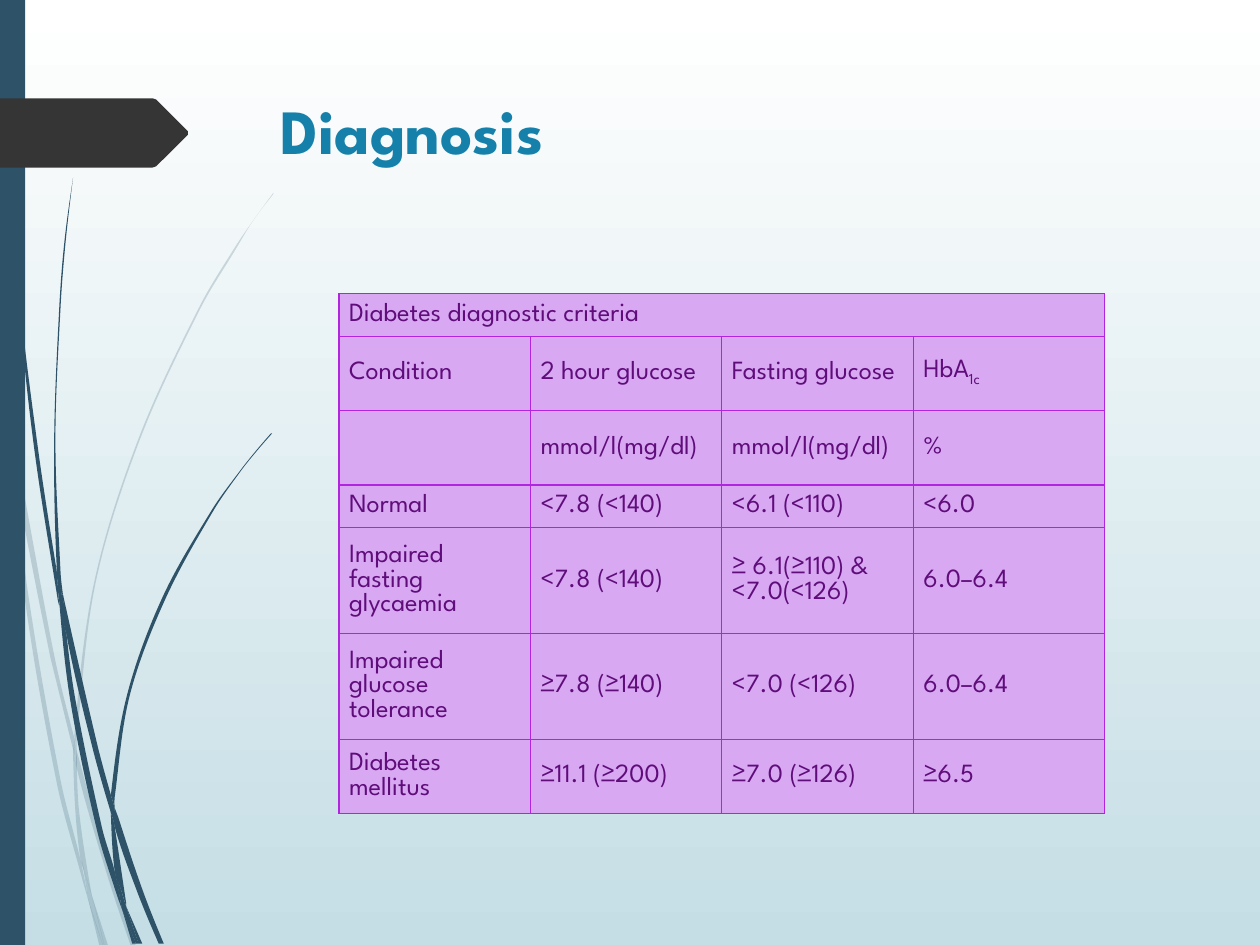
from math import dist
from lxml.etree import SubElement
from pptx import Presentation
from pptx.dml.color import RGBColor
from pptx.enum.shapes import MSO_SHAPE
from pptx.enum.text import MSO_ANCHOR
from pptx.oxml.ns import qn
from pptx.util import Inches, Pt

FONT = "League Spartan"
COLORS = {
    "sky_top": "FFFFFF", "sky_bottom": "C5DEE5", "grass": "2E5369", "arrow": "353535",
    "title": "1581AA", "cell": "D8A8F2", "border": "B125DF", "cell_text": "600D7B",
}

# Each blade piece is a pair of edges, walked one after the other around the piece.
PALE_BLADES = [
    ([(0.08, 3.5), (0.06, 3.22), (0, 2.82)], [(0, 2.99), (0.07, 3.44)]),
    ([(0.4, 5.22), (0.59, 5.99)],
     [(0.59, 5.86), (0.43, 5.2), (0.1, 3.45), (0.12, 3.76), (0.4, 5.22)]),
    ([(0.61, 5.96), (0.61, 6.1), (0.85, 6.94), (1.04, 7.51)],
     [(1.08, 7.51), (0.88, 6.92), (0.64, 6.07)]),
    ([(0.83, 7.51), (0.86, 7.51)], [(0.73, 7.11)]),
    ([(0.7, 7.14), (0.64, 6.83), (0.48, 6.19), (0.22, 4.69), (0.12, 3.76), (0.08, 3.5)],
     [(0.08, 3.5), (0.19, 4.7), (0.45, 6.21), (0.64, 6.93), (0.7, 7.14)]),
    ([(0.58, 5.99), (0.6, 6.46), (0.64, 6.83), (0.67, 6.92), (0.73, 7.11)],
     [(0.72, 7.06), (0.63, 6.46), (0.61, 6.1)]),
    ([(0.61, 5.96), (0.61, 5.84), (0.76, 4.62), (1.11, 3.49), (1.59, 2.45), (1.87, 1.98),
      (2.01, 1.75), (2.17, 1.54)],
     [(2.17, 1.53), (2.01, 1.75), (1.86, 1.97), (1.58, 2.44), (1.1, 3.48), (0.75, 4.61),
      (0.59, 5.84)]),
    ([(0.7, 7.14), (0.79, 7.51)], [(0.82, 7.51)]),
    ([(0.61, 6.1), (0.61, 5.96)], [(0.59, 5.86), (0.58, 5.99)]),
    ([(0.65, 6.83), (0.69, 7.07), (0.7, 7.14), (0.82, 7.51)],
     [(0.83, 7.51), (0.73, 7.11), (0.67, 6.92)]),
]
DARK_BLADES = [
    ([(0.02, 0), (0.03, 0.48), (0.05, 1.1), (0.14, 2.33), (0.27, 3.55), (0.46, 4.77),
      (0.47, 4.81)],
     [(0.45, 4.53), (0.3, 3.55), (0.15, 2.32), (0.06, 1.09), (0.04, 0.48), (0.03, 0)]),
    ([(0.5, 4.72), (0.53, 5.05), (0.73, 5.92), (0.88, 6.45)],
     [(0.88, 6.31), (0.77, 5.9), (0.5, 4.72)]),
    ([(0.91, 6.41), (0.91, 6.56), (1.09, 7.08), (1.26, 7.49)],
     [(1.3, 7.49), (1.13, 7.06), (0.94, 6.49)]),
    ([(0.47, 4.77), (0.56, 5.57), (0.77, 6.59), (0.92, 7.08), (0.97, 7.22)],
     [(0.96, 7.17), (0.91, 6.91), (0.81, 6.57), (0.6, 5.56), (0.53, 5.05)]),
    ([(0.5, 4.72), (0.48, 4.53), (0.44, 3.49), (0.48, 2.45), (0.52, 1.93), (0.58, 1.41)],
     [(0.58, 1.41), (0.51, 1.93), (0.47, 2.45), (0.43, 3.49), (0.45, 4.49), (0.49, 4.72)]),
    ([(1.1, 7.49), (1.13, 7.49)], [(1, 7.19)]),
    ([(0.45, 4.49), (0.47, 4.77), (0.53, 5.05)], [(0.5, 4.72), (0.49, 4.72)]),
    ([(0.91, 6.41), (0.91, 6.33), (1.03, 5.52), (1.31, 4.76), (1.69, 4.06), (1.91, 3.74),
      (2.03, 3.59), (2.16, 3.44)],
     [(2.15, 3.44), (2.03, 3.58), (1.91, 3.73), (1.68, 4.05), (1.29, 4.74), (1.01, 5.51),
      (0.88, 6.31)]),
    ([(0.97, 7.22), (1.05, 7.49)], [(1.08, 7.49)]),
    ([(0.88, 6.45), (0.91, 6.91), (0.96, 7.06), (1, 7.19)],
     [(1, 7.16), (0.91, 6.56), (0.9, 6.51)]),
    ([(0.88, 6.45), (0.9, 6.51), (0.91, 6.56)], [(0.91, 6.41), (0.88, 6.31)]),
    ([(0.91, 6.91), (0.96, 7.17), (0.97, 7.22), (1.08, 7.49)],
     [(1.1, 7.49), (1, 7.19), (0.96, 7.06)]),
]
ARROW = [(0, 0.78), (1.21, 0.78), (1.24, 0.79), (1.49, 1.04), (1.49, 1.07),
         (1.24, 1.32), (1.21, 1.33), (0, 1.33)]

COLUMN_WIDTH = 1.52
ROW_HEIGHTS = [0.34, 0.59, 0.59, 0.34, 0.84, 0.84, 0.59]
CRITERIA = [
    ["Diabetes diagnostic criteria", "", "", ""],
    ["Condition", "2 hour glucose", "Fasting glucose", "HbA"],
    ["", "mmol/l(mg/dl)", "mmol/l(mg/dl)", "%"],
    ["Normal", "<7.8 (<140)", "<6.1 (<110)", "<6.0"],
    ["Impaired fasting glycaemia", "<7.8 (<140)", "≥ 6.1(≥110) & <7.0(<126)", "6.0–6.4"],
    ["Impaired glucose tolerance", "≥7.8 (≥140)", "<7.0 (<126)", "6.0–6.4"],
    ["Diabetes mellitus", "≥11.1 (≥200)", "≥7.0 (≥126)", "≥6.5"],
]


def color(name):
    return RGBColor.from_string(COLORS[name])


def paint(sp, name, opacity=100):
    sp.shadow.inherit = False
    sp.line.fill.background()
    sp.fill.solid()
    sp.fill.fore_color.rgb = color(name)
    if opacity < 100:
        clr = sp.fill._xPr.find(qn("a:solidFill"))[0]
        SubElement(clr, qn("a:alpha")).set("val", str(opacity * 1000))


def handle(before, knot, after, reach):
    """Control point at a knot, along the direction between its neighbours."""
    k = reach / (3 * (dist(before, knot) + dist(knot, after)))
    return tuple(p + k * (b - a) for a, p, b in zip(before, knot, after))


def midpoint(a, b):
    return tuple((p + q) / 2 for p, q in zip(a, b))


def edge_handles(knots):
    """Pairs of control points, one pair for each step along a smooth edge."""
    last = len(knots) - 2
    pairs = []
    for i, (a, b) in enumerate(zip(knots, knots[1:])):
        reach = dist(a, b)
        out = handle(knots[i - 1], a, b, reach) if i > 0 else None
        back = handle(knots[i + 2], b, a, reach) if i < last else None
        out = out or midpoint(a, back or b)
        pairs.append((out, back or midpoint(b, out)))
    return pairs


def add_outline(shapes, points):
    start, *rest = [(Inches(x), Inches(y)) for x, y in points]
    builder = shapes.build_freeform(*start)
    builder.add_line_segments(rest, close=True)
    return builder.convert_to_shape()


def add_blade(shapes, first, second):
    sp = add_outline(shapes, first + second)
    joint = (first[-1], second[0])
    handles = edge_handles(first) + [joint] + edge_handles(second)
    for line, pair in zip(list(sp._element.iter(qn("a:lnTo"))), handles):
        line.tag = qn("a:cubicBezTo")
        for i, (x, y) in enumerate(pair):
            pt = line.makeelement(qn("a:pt"), {"x": str(Inches(x) - sp.left),
                                               "y": str(Inches(y) - sp.top)})
            line.insert(i, pt)
    return sp


def add_grass(s, blades, opacity):
    group = s.shapes.add_group_shape()
    for first, second in blades:
        paint(add_blade(group.shapes, first, second), "grass", opacity)


def set_background(s):
    fill = s.background.fill
    fill.gradient()
    fill.gradient_angle = 270
    for stop, name in zip(fill.gradient_stops, ("sky_top", "sky_bottom")):
        stop.color.rgb = color(name)


def format_run(r, size, name, bold=False):
    r.font.name = FONT
    r.font.size = Pt(size)
    r.font.bold = bold
    r.font.color.rgb = color(name)


def add_title(s, text):
    tf = s.shapes.add_textbox(Inches(2.13), Inches(0.68), Inches(7.21), Inches(1.4)).text_frame
    tf.word_wrap = True
    tf.text = text
    format_run(tf.paragraphs[0].runs[0], 36, "title", bold=True)


def format_cell(cell, text):
    tc_pr = cell._tc.get_or_add_tcPr()
    for side in ("lnL", "lnR", "lnT", "lnB"):
        ln = SubElement(tc_pr, qn(f"a:{side}"), w=str(Pt(0.75)))
        SubElement(SubElement(ln, qn("a:solidFill")), qn("a:srgbClr"), val=COLORS["border"])
    cell.fill.solid()
    cell.fill.fore_color.rgb = color("cell")
    cell.vertical_anchor = MSO_ANCHOR.MIDDLE
    cell.margin_left = cell.margin_right = Inches(0.08)
    cell.margin_top = cell.margin_bottom = Inches(0.04)
    if text:
        cell.text_frame.text = text
        format_run(cell.text_frame.paragraphs[0].runs[0], 15, "cell_text")


def add_criteria_table(s):
    columns = len(CRITERIA[0])
    table = s.shapes.add_table(len(CRITERIA), columns, Inches(2.69), Inches(2.33),
                               Inches(columns * COLUMN_WIDTH), Inches(sum(ROW_HEIGHTS))).table
    for column in table.columns:
        column.width = Inches(COLUMN_WIDTH)
    for i, (height, texts) in enumerate(zip(ROW_HEIGHTS, CRITERIA)):
        table.rows[i].height = Inches(height)
        for j, text in enumerate(texts):
            format_cell(table.cell(i, j), text)
    table.cell(0, 0).merge(table.cell(0, columns - 1))
    subscript = table.cell(1, 3).text_frame.paragraphs[0].add_run()
    subscript.text = "1c"
    format_run(subscript, 15, "cell_text")
    subscript.font._element.set("baseline", "-25000")


def main():
    prs = Presentation()
    prs.slide_width, prs.slide_height = Inches(10), Inches(7.5)
    s = prs.slides.add_slide(prs.slide_layouts[6])
    set_background(s)
    add_grass(s, PALE_BLADES, 20)
    add_grass(s, DARK_BLADES, 100)
    paint(s.shapes.add_shape(MSO_SHAPE.RECTANGLE, 0, 0, Inches(0.2), prs.slide_height), "grass")
    paint(add_outline(s.shapes, ARROW), "arrow")
    add_title(s, "Diagnosis")
    add_criteria_table(s)
    prs.save("out.pptx")


if __name__ == "__main__":
    main()
